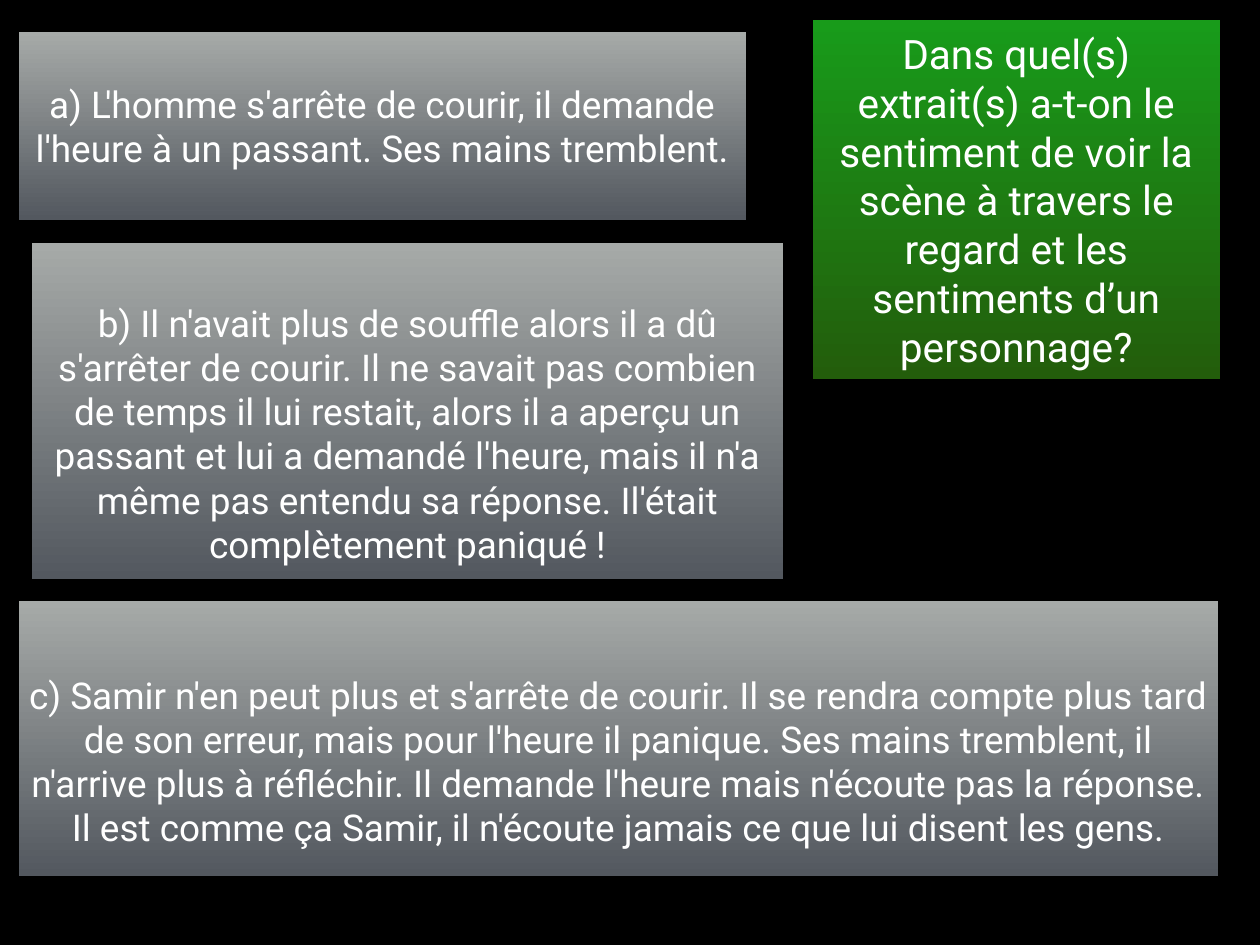
import pptx
import pptx.dml.color
import pptx.enum.shapes
import pptx.enum.text
import pptx.util

Inches = pptx.util.Inches
RGBColor = pptx.dml.color.RGBColor

BLACK = RGBColor(0x00, 0x00, 0x00)
WHITE = RGBColor(0xFF, 0xFF, 0xFF)
GREYS = (RGBColor(0xA6, 0xAA, 0xA8), RGBColor(0x53, 0x58, 0x5F))
GREENS = (RGBColor(0x18, 0x9B, 0x1A), RGBColor(0x23, 0x5D, 0x0B))

INSET = 0.06
LINE_DROP = 0.5  # height of one line of an extract

QUESTION_BOX = (9.17, 0.23, 4.6, 4.05)
QUESTION = (
    "Dans quel(s) extrait(s) a-t-on le sentiment de voir la scène "
    "à travers le regard et les sentiments d’un personnage?"
)

# box, lines the text is lowered by, text
EXTRACTS = [
    ((0.21, 0.36, 8.21, 2.12), 0,
     "a) L'homme s'arrête de courir, il demande l'heure à un passant. "
     "Ses mains tremblent."),
    ((0.36, 2.74, 8.48, 3.8), 1,
     "b) Il n'avait plus de souffle alors il a dû s'arrêter de courir. "
     "Il ne savait pas combien de temps il lui restait, alors il a aperçu "
     "un passant et lui a demandé l'heure, mais il n'a même pas entendu "
     "sa réponse. Il'était complètement paniqué !"),
    ((0.21, 6.79, 13.54, 3.1), 1,
     "c) Samir n'en peut plus et s'arrête de courir. Il se rendra compte "
     "plus tard de son erreur, mais pour l'heure il panique. Ses mains "
     "tremblent, il n'arrive plus à réfléchir. Il demande l'heure mais "
     "n'écoute pas la réponse. Il est comme ça Samir, il n'écoute jamais "
     "ce que lui disent les gens."),
]


def fill_downwards(sp, colors):
    sp.fill.gradient()
    sp.fill.gradient_angle = 270
    for stop, position, color in zip(sp.fill.gradient_stops, (0, 1), colors):
        stop.position = position
        stop.color.rgb = color
    sp.line.fill.background()


def write_text(sp, text, size, drop=0):
    """Centre the text in the shape, below a drop given in inches."""
    tf = sp.text_frame
    frame_format = {
        "word_wrap": True,
        "auto_size": pptx.enum.text.MSO_AUTO_SIZE.NONE,
        "vertical_anchor": pptx.enum.text.MSO_ANCHOR.MIDDLE,
        "margin_left": Inches(INSET),
        "margin_top": Inches(INSET + drop),
        "margin_right": Inches(INSET),
        "margin_bottom": Inches(INSET),
    }
    for name, value in frame_format.items():
        setattr(tf, name, value)
    p = tf.paragraphs[0]
    p.alignment = pptx.enum.text.PP_ALIGN.CENTER
    r = p.add_run()
    r.text = text
    for name, value in {"name": "Roboto", "size": pptx.util.Pt(size)}.items():
        setattr(r.font, name, value)
    r.font.color.rgb = WHITE


def add_question(s, box):
    sp = s.shapes.title
    for name, value in zip(("left", "top", "width", "height"), box):
        setattr(sp, name, Inches(value))
    fill_downwards(sp, GREENS)
    write_text(sp, QUESTION, 33)


def add_extract(s, box, lowered_lines, text):
    sp = s.shapes.add_shape(
        pptx.enum.shapes.MSO_SHAPE.RECTANGLE, *map(Inches, box))
    sp.shadow.inherit = False
    fill_downwards(sp, GREYS)
    write_text(sp, text, 30, lowered_lines * LINE_DROP)


def main():
    prs = pptx.Presentation()
    prs.slide_width = Inches(14.22)
    prs.slide_height = Inches(10.67)
    s = prs.slides.add_slide(prs.slide_layouts.get_by_name("Title Only"))
    s.background.fill.solid()
    s.background.fill.fore_color.rgb = BLACK
    add_question(s, QUESTION_BOX)
    for box, lowered_lines, text in EXTRACTS:
        add_extract(s, box, lowered_lines, text)
    prs.save("out.pptx")


if __name__ == "__main__":
    main()
